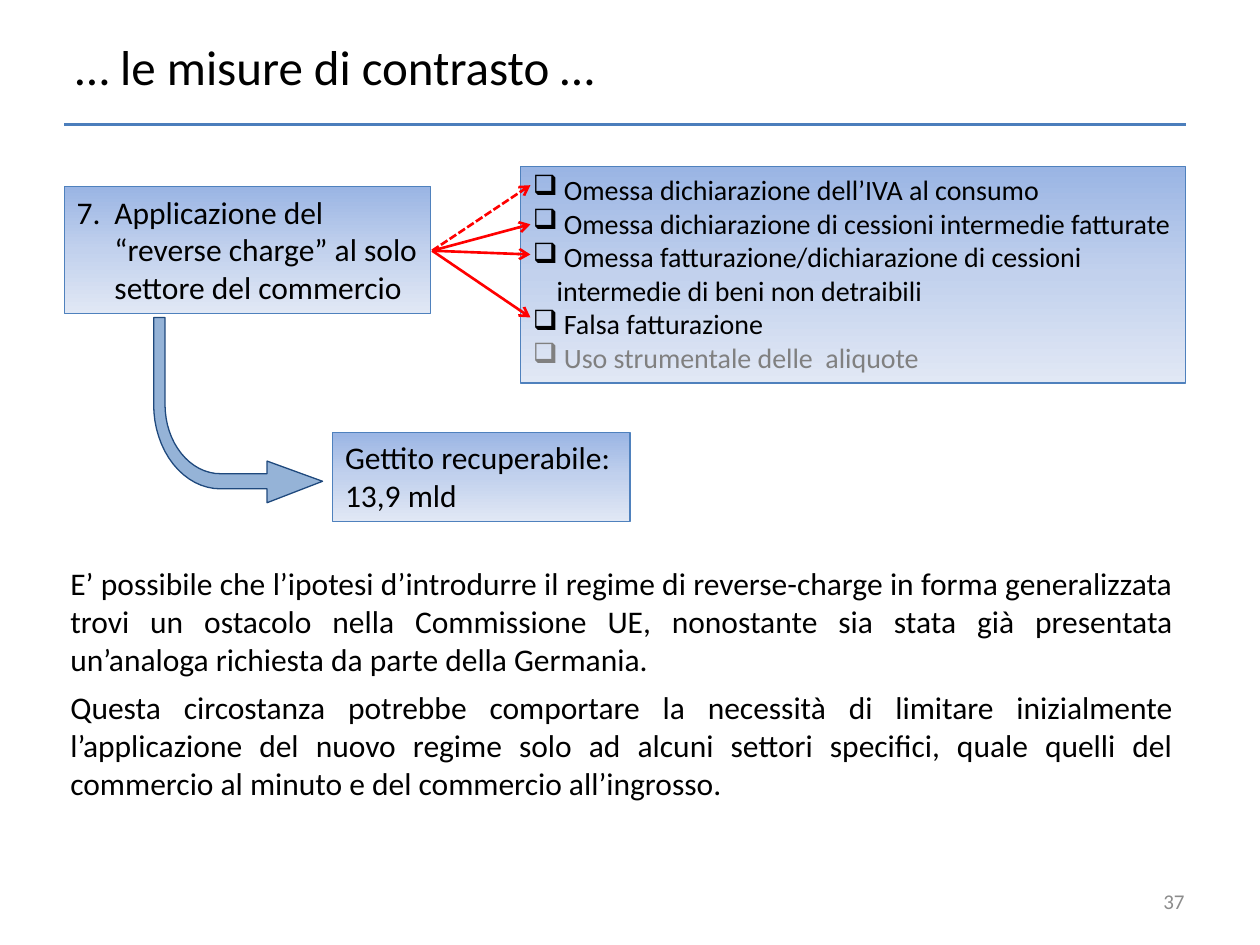
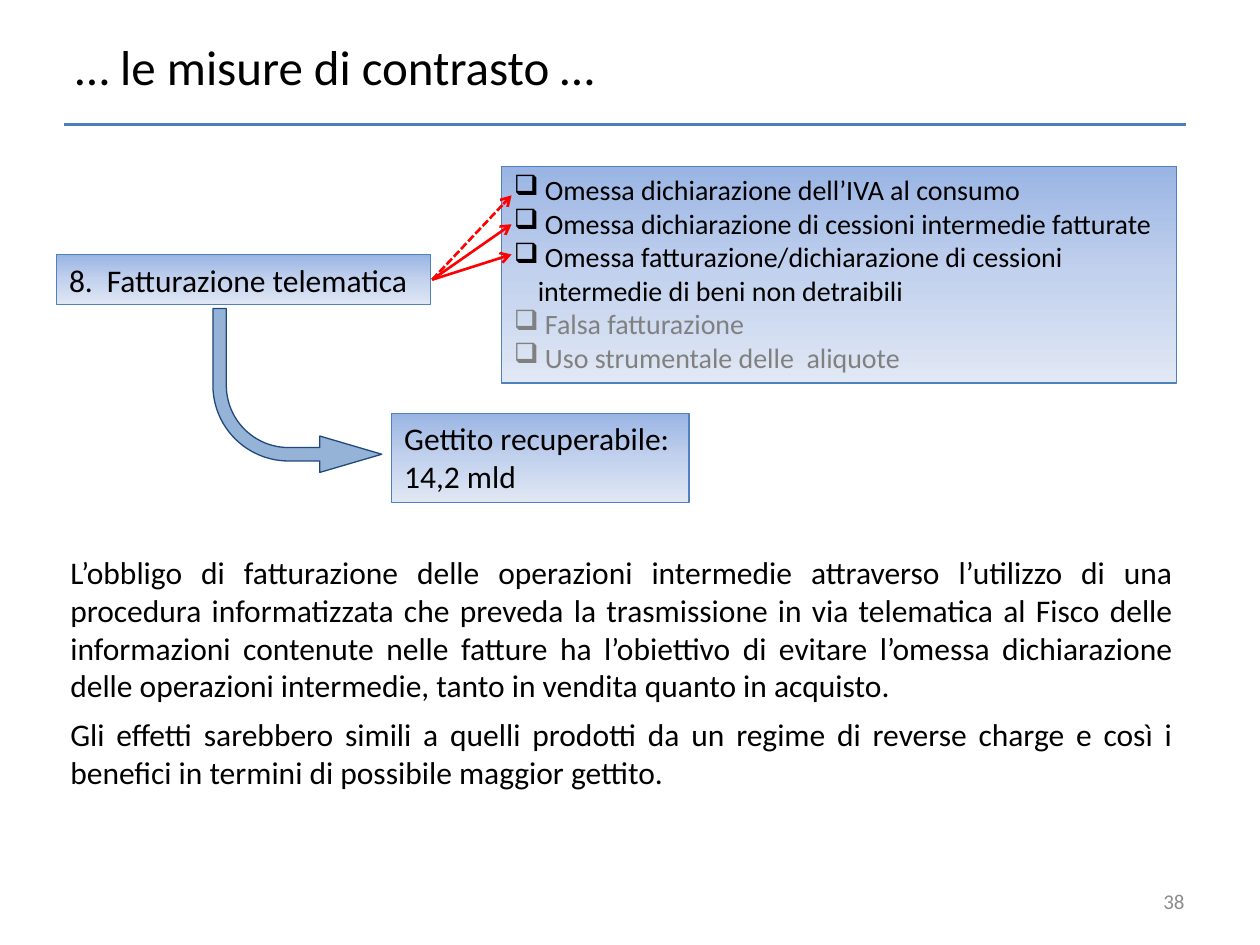
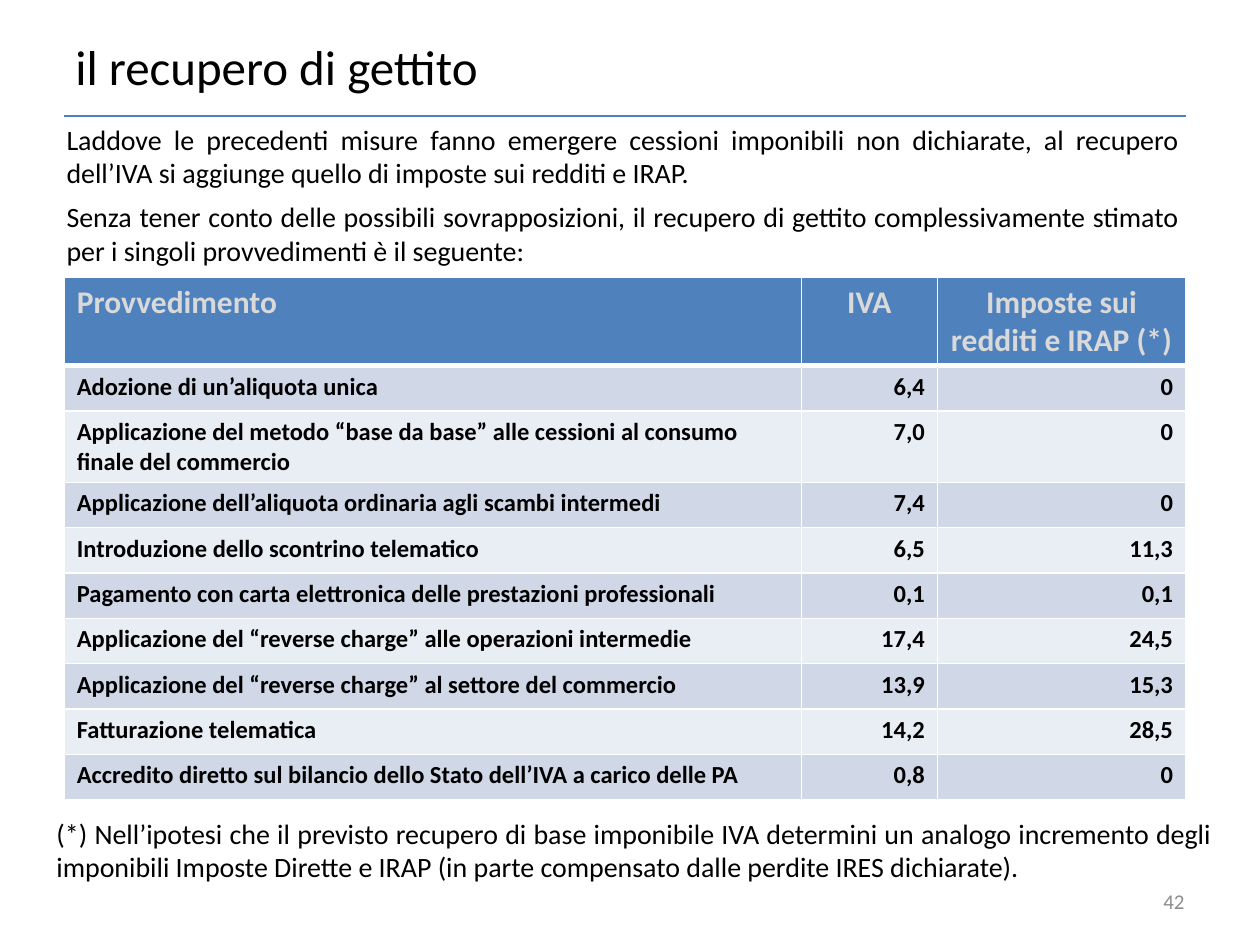
import copy
import math

import pptx
import pptx.dml.color
import pptx.enum.dml
import pptx.enum.shapes
import pptx.enum.text
import pptx.oxml.ns
import pptx.util
from lxml import etree

Inches = pptx.util.Inches
Pt = pptx.util.Pt
RGBColor = pptx.dml.color.RGBColor
ALIGN = pptx.enum.text.PP_ALIGN
ANCHOR = pptx.enum.text.MSO_ANCHOR
SHAPE = pptx.enum.shapes.MSO_SHAPE
qn = pptx.oxml.ns.qn

BLACK = RGBColor(0x00, 0x00, 0x00)
WHITE = RGBColor(0xFF, 0xFF, 0xFF)
MUTED = RGBColor(0x80, 0x80, 0x80)
NUMBER_GRAY = RGBColor(0x8C, 0x8C, 0x8C)
RULE_BLUE = RGBColor(0x4B, 0x7E, 0xBC)
BORDER_BLUE = RGBColor(0x4F, 0x81, 0xBD)
ARROW_FILL = RGBColor(0x95, 0xB3, 0xD7)
ARROW_EDGE = RGBColor(0x1F, 0x49, 0x7D)
RED = RGBColor(0xFF, 0x00, 0x00)
HEADER_TEXT = RGBColor(0xD9, 0xD9, 0xD9)
BAND_DARK = RGBColor(0xD0, 0xD8, 0xE8)
BAND_LIGHT = RGBColor(0xE9, 0xED, 0xF4)
BOX_GRADIENT = [
    (0, RGBColor(0x9A, 0xB5, 0xE4)),
    (0.5, RGBColor(0xC2, 0xD1, 0xED)),
    (1, RGBColor(0xE1, 0xE8, 0xF5)),
]
FONT = "Calibri"
LEFT, RIGHT = 0.51, 9.41

EVASIONS = [
    " Omessa dichiarazione dell’IVA al consumo",
    " Omessa dichiarazione di cessioni intermedie fatturate",
    " Omessa fatturazione/dichiarazione di cessioni intermedie di beni non detraibili",
    " Falsa fatturazione",
    " Uso strumentale delle  aliquote",
]
REVENUE_HEADER = ["Provvedimento", "IVA", "Imposte sui redditi e IRAP (*)"]
REVENUE = [
    ("Adozione di un’aliquota unica", "6,4", "0"),
    ("Applicazione del metodo “base da base” alle cessioni al consumo finale del commercio", "7,0", "0"),
    ("Applicazione dell’aliquota ordinaria agli scambi intermedi", "7,4", "0"),
    ("Introduzione dello scontrino telematico", "6,5", "11,3"),
    ("Pagamento con carta elettronica delle prestazioni professionali", "0,1", "0,1"),
    ("Applicazione del “reverse charge” alle operazioni intermedie", "17,4", "24,5"),
    ("Applicazione del “reverse charge” al settore del commercio", "13,9", "15,3"),
    ("Fatturazione telematica", "14,2", "28,5"),
    ("Accredito diretto sul bilancio dello Stato dell’IVA a carico delle PA", "0,8", "0"),
]


def quarter_arc(center, radii, start, end, steps=16):
    angles = [math.radians(start + (end - start) * i / steps) for i in range(steps + 1)]
    return [(center[0] + radii[0] * math.cos(a), center[1] + radii[1] * math.sin(a)) for a in angles]


class Deck:
    def __init__(self):
        self.prs = pptx.Presentation()
        self.prs.slide_width, self.prs.slide_height = Inches(10), Inches(7.5)
        self.slide = None

    def start(self, title, number, rule_y):
        self.slide = self.prs.slides.add_slide(self.prs.slide_layouts[6])
        self.text((0.5, 0.05, 4.42, 0.94), [title], 28, anchor=ANCHOR.MIDDLE)
        self.line((LEFT, rule_y), (RIGHT, rule_y), RULE_BLUE)
        self.text((7.17, 6.95, 2.33, 0.4), [str(number)], 12, NUMBER_GRAY, ALIGN.RIGHT, ANCHOR.MIDDLE)

    def run(self, paragraph, text, size, color=BLACK, bold=False):
        run = paragraph.add_run()
        run.text = text
        run.font.name, run.font.size, run.font.bold = FONT, Pt(size), bold
        run.font.color.rgb = color

    def fill_frame(self, frame, texts, size, colors, align, anchor, hang=0, bullet=None):
        frame.word_wrap = True
        frame.vertical_anchor = anchor
        for i, text in enumerate(texts):
            paragraph = frame.add_paragraph() if i else frame.paragraphs[0]
            paragraph.alignment = align
            if i and not bullet:
                paragraph.space_before = Pt(6)
            if hang:
                props = paragraph._p.get_or_add_pPr()
                props.set("marL", str(Inches(hang)))
                props.set("indent", str(-Inches(hang)))
                if bullet:
                    etree.SubElement(props, qn("a:buChar")).set("char", bullet)
            self.run(paragraph, text, size, colors[i])

    def text(self, box, texts, size, color=BLACK, align=ALIGN.LEFT, anchor=ANCHOR.TOP):
        frame = self.slide.shapes.add_textbox(*map(Inches, box)).text_frame
        self.fill_frame(frame, texts, size, [color] * len(texts), align, anchor)

    def body(self, box, texts, size):
        self.text(box, texts, size, align=ALIGN.JUSTIFY)

    def box(self, box, texts, size=18, colors=(BLACK,), hang=0, bullet=None):
        panel = self.slide.shapes.add_shape(SHAPE.RECTANGLE, *map(Inches, box))
        panel.shadow.inherit = False
        panel.fill.gradient()
        panel.fill.gradient_angle = 270
        stops = panel._element.spPr.find(".//" + qn("a:gsLst"))
        stops.append(copy.deepcopy(stops[0]))
        for stop, (position, color) in zip(panel.fill.gradient_stops, BOX_GRADIENT):
            stop.position, stop.color.rgb = position, color
        panel.line.color.rgb, panel.line.width = BORDER_BLUE, Pt(0.75)
        self.fill_frame(panel.text_frame, texts, size, colors, ALIGN.LEFT, ANCHOR.TOP, hang, bullet)

    def line(self, start, end, color, dashed=False, arrow=False):
        line = self.slide.shapes.add_connector(
            pptx.enum.shapes.MSO_CONNECTOR.STRAIGHT, *map(Inches, start + end))
        line.line.color.rgb, line.line.width = color, Pt(1.5)
        if dashed:
            line.line.dash_style = pptx.enum.dml.MSO_LINE.SQUARE_DOT
        if arrow:
            etree.SubElement(line.line._get_or_add_ln(), qn("a:tailEnd")).set("type", "arrow")
        etree.SubElement(line._element.spPr, qn("a:effectLst"))

    def style_arrow(self, arrow):
        arrow.shadow.inherit = False
        arrow.fill.solid()
        arrow.fill.fore_color.rgb = ARROW_FILL
        arrow.line.color.rgb, arrow.line.width = ARROW_EDGE, Pt(0.75)

    def curved_arrow(self, points):
        corners = [(Inches(x), Inches(y)) for x, y in points]
        builder = self.slide.shapes.build_freeform(*corners[0])
        builder.add_line_segments(corners[1:], close=True)
        self.style_arrow(builder.convert_to_shape())

    def bent_arrow(self, box, adjustments):
        arrow = self.slide.shapes.add_shape(SHAPE.BENT_ARROW, *map(Inches, box))
        arrow._element.spPr.xfrm.set("flipV", "1")
        for i, value in enumerate(adjustments):
            arrow.adjustments[i] = value
        self.style_arrow(arrow)

    def measure(self, number, measure, measure_box, evasion_box, active, source, targets, revenue, revenue_box):
        self.start("… le misure di contrasto …", number, 0.99)
        colors = [BLACK] * active + [MUTED] * (len(EVASIONS) - active)
        self.box(evasion_box, EVASIONS, 16, colors, 0.19, "❑")
        self.box(measure_box, [measure], hang=0.3)
        self.box(revenue_box, ["Gettito recuperabile: " + revenue])
        target_x, heights = targets
        for i, y in enumerate(heights):
            self.line(source, (target_x, y), RED, dashed=i == 0, arrow=True)

    def cell(self, cell, text, size, color, align, fill, top, bottom):
        cell.fill.solid()
        cell.fill.fore_color.rgb = fill
        paragraph = cell.text_frame.paragraphs[0]
        paragraph.alignment = align
        self.run(paragraph, text, size, color, True)
        props = cell._tc.get_or_add_tcPr()
        for i, (side, width) in enumerate([("L", 1), ("R", 1), ("T", top), ("B", bottom)]):
            border = etree.Element(qn("a:ln" + side), w=str(Pt(width)))
            solid = etree.SubElement(border, qn("a:solidFill"))
            etree.SubElement(solid, qn("a:srgbClr")).set("val", str(WHITE))
            props.insert(i, border)

    def table(self, box, widths, heights, header, rows):
        table = self.slide.shapes.add_table(len(rows) + 1, len(header), *map(Inches, box)).table
        for column, width in zip(table.columns, widths):
            column.width = Inches(width)
        for row, height in zip(table.rows, heights):
            row.height = Inches(height)
        for c, text in enumerate(header):
            align = ALIGN.CENTER if c else ALIGN.LEFT
            self.cell(table.cell(0, c), text, 18, HEADER_TEXT, align, BORDER_BLUE, 1, 3)
        for r, values in enumerate(rows, 1):
            fill = BAND_DARK if r % 2 else BAND_LIGHT
            for c, text in enumerate(values):
                align = ALIGN.RIGHT if c else ALIGN.LEFT
                self.cell(table.cell(r, c), text, 14, BLACK, align, fill, 3 if r == 1 else 1, 1)


def reverse_charge(deck):
    deck.measure(
        37, "7.\tApplicazione del “reverse charge” al solo settore del commercio",
        (LEFT, 1.48, 2.91, 1.01), (4.13, 1.32, 5.28, 1.72), 4,
        (3.43, 1.99), (4.21, [1.47, 1.78, 2.02, 2.52]), "13,9 mld", (2.64, 3.43, 2.36, 0.71))
    bend = (1.75, 3.21)
    outer = quarter_arc(bend, (0.53, 0.67), 180, 90)
    inner = quarter_arc(bend, (0.44, 0.55), 90, 180)
    head = [(2.12, 3.88), (2.12, 3.99), (2.56, 3.82), (2.12, 3.66), (2.12, 3.76)]
    deck.curved_arrow([(1.22, 2.52)] + outer + head + inner + [(1.31, 2.52)])
    deck.body((0.46, 4.43, 8.95, 1.99), [
        "E’ possibile che l’ipotesi d’introdurre il regime di reverse-charge in forma generalizzata "
        "trovi un ostacolo nella Commissione UE, nonostante sia stata già presentata un’analoga "
        "richiesta da parte della Germania.",
        "Questa circostanza potrebbe comportare la necessità di limitare inizialmente l’applicazione "
        "del nuovo regime solo ad alcuni settori specifici, quale quelli del commercio al minuto e "
        "del commercio all’ingrosso.",
    ], 18)


def electronic_invoicing(deck):
    deck.measure(
        38, "8.\tFatturazione telematica",
        (0.45, 2.02, 2.97, 0.4), (3.98, 1.32, 5.36, 1.72), 3,
        (3.43, 2.22), (4.06, [1.55, 1.78, 2.02]), "14,2 mld", (3.11, 3.28, 2.36, 0.71))
    deck.bent_arrow((1.69, 2.45, 1.34, 1.3), (0.082, 0.111, 0.378, 0.462))
    deck.body((0.46, 4.34, 8.95, 2), [
        "L’obbligo di fatturazione delle operazioni intermedie attraverso l’utilizzo di una procedura "
        "informatizzata che preveda la trasmissione in via telematica al Fisco delle informazioni "
        "contenute nelle fatture ha l’obiettivo di evitare l’omessa dichiarazione delle operazioni "
        "intermedie, tanto in vendita quanto in acquisto.",
        "Gli effetti sarebbero simili a quelli prodotti da un regime di reverse charge e così i "
        "benefici in termini di possibile maggior gettito.",
    ], 18)


def revenue_recovery(deck):
    deck.start("il recupero di gettito", 42, 0.92)
    deck.body((0.43, 0.92, 9.03, 1.26), [
        "Laddove le precedenti misure fanno emergere cessioni imponibili non dichiarate, al recupero "
        "dell’IVA si aggiunge quello di imposte sui redditi e IRAP.",
        "Senza tener conto delle possibili sovrapposizioni, il recupero di gettito complessivamente "
        "stimato per i singoli provvedimenti è il seguente:",
    ], 16)
    heights = [0.67, 0.36, 0.54] + [0.36] * 7
    deck.table((LEFT, 2.2, 8.9, 4.13), (5.85, 1.08, 1.97), heights, REVENUE_HEADER, REVENUE)
    deck.body((0.35, 6.43, 9.37, 0.64), [
        "(*) Nell’ipotesi che il previsto recupero di base imponibile IVA determini un analogo "
        "incremento degli imponibili Imposte Dirette e IRAP (in parte compensato dalle perdite "
        "IRES dichiarate).",
    ], 16)


def main():
    deck = Deck()
    reverse_charge(deck)
    electronic_invoicing(deck)
    revenue_recovery(deck)
    deck.prs.save("out.pptx")


if __name__ == "__main__":
    main()
